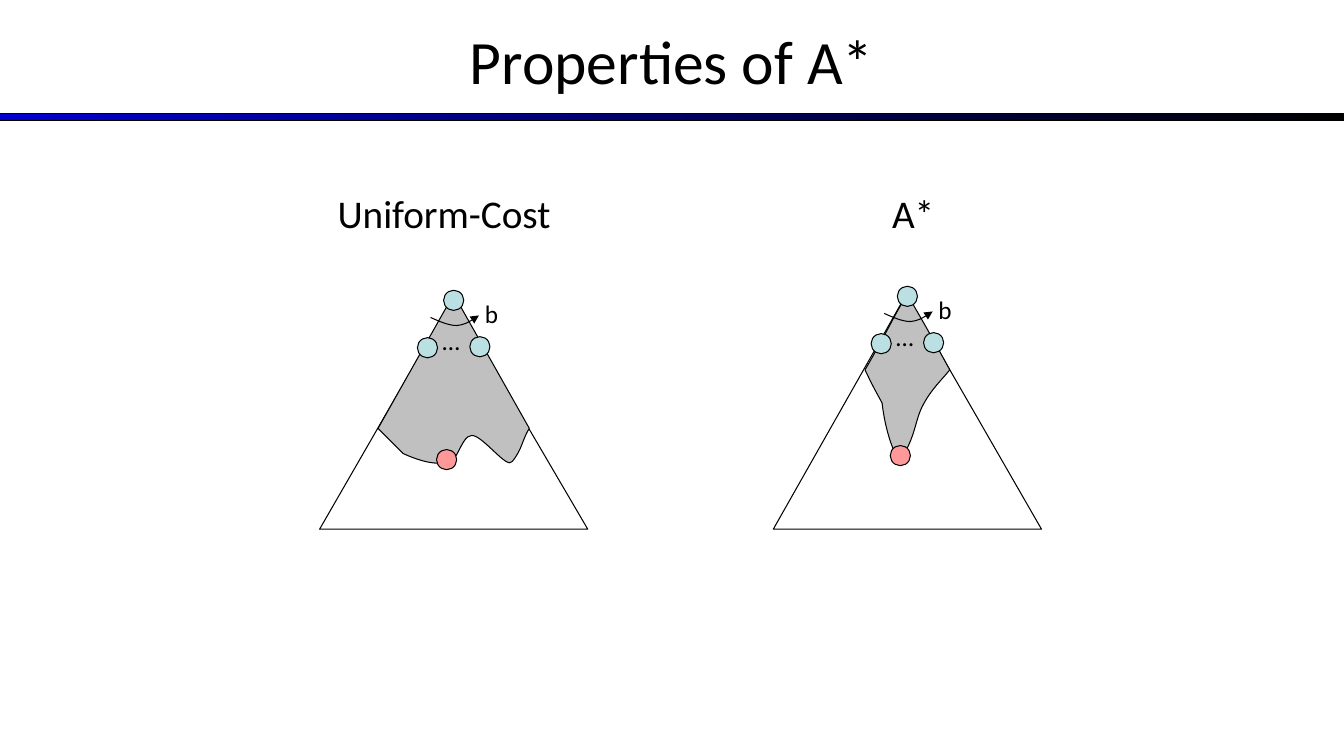
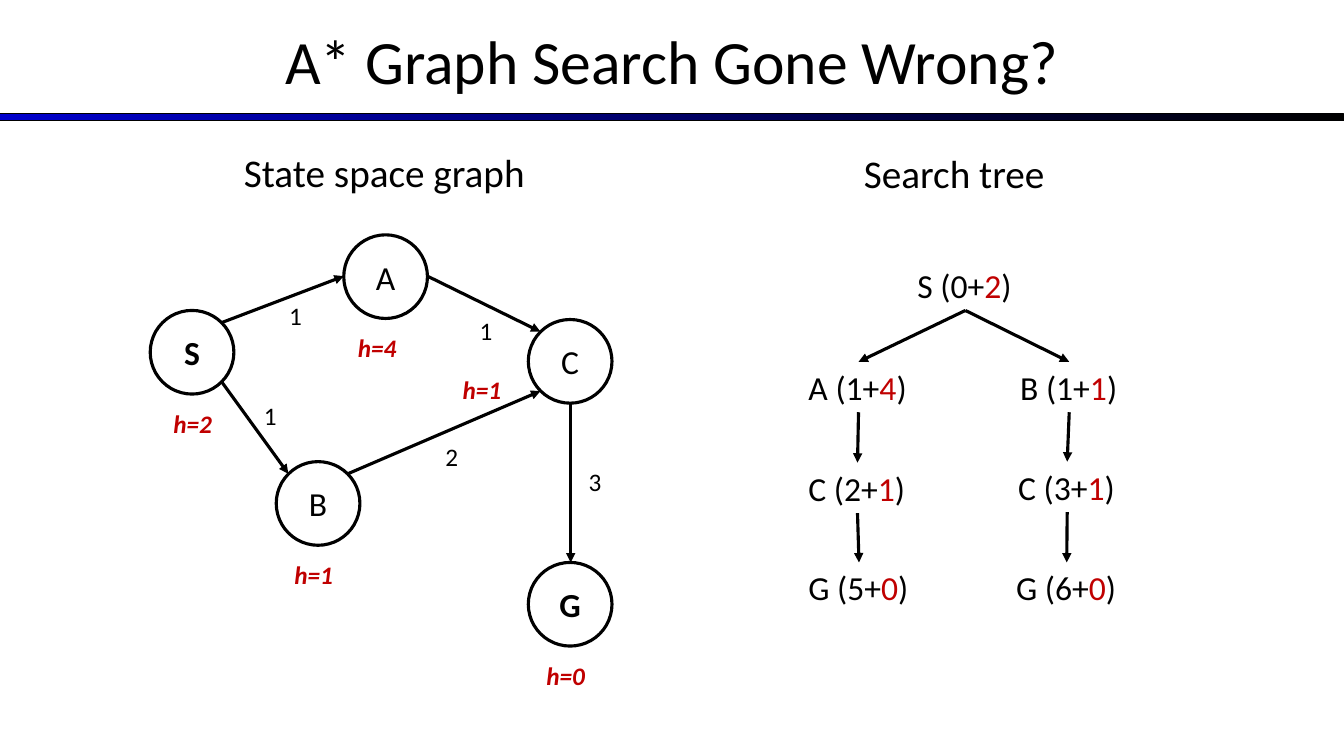
from dataclasses import dataclass
from math import cos, radians, sin

from lxml import etree
from pptx import Presentation
from pptx.dml.color import RGBColor
from pptx.enum.shapes import MSO_CONNECTOR, MSO_SHAPE
from pptx.enum.text import MSO_ANCHOR, MSO_AUTO_SIZE, PP_ALIGN
from pptx.oxml.ns import qn
from pptx.util import Pt

PX = 9144
WIDE, HIGH = 1333, 750
TITLE_ONLY = 5
RECT, OVAL = MSO_SHAPE.RECTANGLE, MSO_SHAPE.OVAL
STRAIGHT = MSO_CONNECTOR.STRAIGHT
MIDDLE = MSO_ANCHOR.MIDDLE
CENTER = PP_ALIGN.CENTER
GROW = MSO_AUTO_SIZE.SHAPE_TO_FIT_TEXT
TOP, BOTTOM = 0, 2


@dataclass(frozen=True)
class Theme:
    font: str = "Calibri"
    ink: str = "000000"
    paper: str = "FFFFFF"
    band: str = "0000CC"
    red: str = "C00000"
    node: str = "BBE0E3"
    goal: str = "FF9999"
    seen: str = "C0C0C0"
    title: int = 44
    head: int = 28
    body: int = 24
    small: int = 18
    thin: float = 0.75
    thick: float = 2.25


class Deck:
    """Draws styled elements on the current slide, with lengths in px."""

    def __init__(self, theme):
        self.theme = theme
        self.prs = Presentation()
        self.prs.slide_width = WIDE * PX
        self.prs.slide_height = HIGH * PX
        self.layout = self.prs.slide_layouts[TITLE_ONLY]
        self.slide = None

    def start(self, title):
        first = self.slide is None
        self.slide = self.prs.slides.add_slide(self.layout)
        if first:
            self.band()
        shape = self.slide.shapes.title
        self.place(shape, 0, -3, WIDE, 125)
        shape.text_frame.vertical_anchor = MIDDLE
        self.letter(shape, [(title, self.theme.ink)], self.theme.title, CENTER)

    def place(self, shape, x, y, w, h):
        shape.left, shape.top = x * PX, y * PX
        shape.width, shape.height = w * PX, h * PX

    def band(self):
        band = self.shape(RECT, 0, 113, WIDE, 7, self.theme.band, self.theme.thin)
        band.fill.gradient()
        band.fill.gradient_angle = 0
        tints = self.theme.band, self.theme.ink
        for stop, tint in zip(band.fill.gradient_stops, tints):
            stop.color.rgb = RGBColor.from_string(tint)
        self.layout.shapes.element.append(band.element)

    def letter(self, shape, runs, size, align=None, bold=False, slant=False):
        para = shape.text_frame.paragraphs[0]
        para.alignment = align
        for text, tint in runs:
            run = para.add_run()
            run.text = text
            font = run.font
            font.name, font.size = self.theme.font, Pt(size)
            font.bold, font.italic = bold, slant
            font.color.rgb = RGBColor.from_string(tint)

    def paint(self, shape, fill, width):
        shape.shadow.inherit = False
        if fill:
            shape.fill.solid()
            shape.fill.fore_color.rgb = RGBColor.from_string(fill)
        else:
            shape.fill.background()
        self.stroke(shape, width)

    def stroke(self, shape, width, arrow=False):
        shape.line.color.rgb = RGBColor.from_string(self.theme.ink)
        shape.line.width = Pt(width)
        if arrow:
            line = shape.element.find(".//" + qn("a:ln"))
            etree.SubElement(line, qn("a:tailEnd"), type="triangle")

    def shape(self, kind, x, y, w, h, fill, width):
        shape = self.slide.shapes.add_shape(kind, x * PX, y * PX, w * PX, h * PX)
        self.paint(shape, fill, width)
        return shape

    def dot(self, x, y, fill):
        self.shape(OVAL, x, y, 20, 20, fill, self.theme.thin)

    def state(self, name, x, y, bold):
        theme = self.theme
        shape = self.shape(OVAL, x, y, 83, 83, theme.paper, theme.thick)
        shape.text_frame.vertical_anchor = MIDDLE
        self.letter(shape, [(name, theme.ink)], theme.body, CENTER, bold)

    def text(self, runs, x, y, w, h, size, wrap=False, **style):
        box = self.slide.shapes.add_textbox(x * PX, y * PX, w * PX, h * PX)
        box.text_frame.word_wrap = wrap
        box.text_frame.auto_size = GROW
        self.letter(box, runs, size, **style)
        return box

    def label(self, text, x, y, w, h, size, wrap=False):
        self.text([(text, self.theme.ink)], x, y, w, h, size, wrap)

    def arrow(self, start, end):
        ends = [round(v) * PX for v in (*start, *end)]
        line = self.slide.shapes.add_connector(STRAIGHT, *ends)
        self.stroke(line, self.theme.thick, True)
        props = line.element.find(qn("p:spPr"))
        etree.SubElement(props, qn("a:effectLst"))
        return line

    def link(self, upper, lower):
        line = self.arrow((0, 0), (0, 0))
        line.begin_connect(upper, BOTTOM)
        line.end_connect(lower, TOP)

    def outline(self, start, steps, fill=None, close=True):
        points = [p for s in steps for p in zip(s[::2], s[1::2])]
        pen = self.slide.shapes.build_freeform(*start, scale=PX)
        pen.add_line_segments(points, close=close)
        form = pen.convert_to_shape()
        parts = iter(form.element.findall(".//" + qn("a:lnTo")))
        for step in steps:
            part = next(parts)
            if len(step) == 6:
                part.tag = qn("a:cubicBezTo")
                for _ in range(2):
                    rest = next(parts)
                    part.append(rest[0])
                    rest.getparent().remove(rest)
        self.paint(form, fill, self.theme.thin)
        return form

    def fan(self, dx, dy, start, region):
        theme = self.theme
        self.outline((317 + dx, 525), [(583 + dx, 525), (449 + dx, 296 + dy)])
        self.outline(start, region, theme.seen)
        for x, y in (414, 335), (466, 334), (440, 288):
            self.dot(x + dx, y + dy, theme.node)
        self.dot(433 + dx, 446 + dy, theme.goal)
        self.label("…", 429 + dx, 318 + dy, 30, 40, theme.small, True)
        bends = [(436, 319, 445, 323, 453, 323), (461, 322, 468, 318, 475, 313)]
        shift = (dx, dy) * 3
        bends = [tuple(a + b for a, b in zip(bend, shift)) for bend in bends]
        arc = self.outline((427 + dx, 315 + dy), bends, close=False)
        self.stroke(arc, theme.thin, True)
        self.label("b", 471 + dx, 291 + dy, 33, 40, theme.small, True)


def rim(spot, angle):
    x, y = spot
    turn = radians(angle)
    return x + 41.5 + 41.5 * cos(turn), y + 41.5 - 41.5 * sin(turn)


def compare(deck):
    deck.start("Properties of A*")
    deck.fan(0, 0, (450, 292), [
        (375, 425), (400, 450),
        (400, 450, 429, 464, 442, 458),
        (453, 464, 457, 432, 468, 432),
        (479, 432, 503, 466, 508, 458),
        (518, 446, 518, 436, 525, 425),
    ])
    deck.fan(450, -4, (900, 292), [
        (885, 316, 884, 322, 858, 367),
        (866, 384, 868, 387, 875, 400),
        (875, 400, 878, 434, 892, 458),
        (909, 433, 907, 417, 916, 401),
        (924, 386, 934, 377, 942, 367),
        (917, 321, 910, 310, 900, 292),
    ])
    for text, x, w in ("Uniform-Cost", 325, 250), ("A*", 875, 67):
        deck.label(text, x, 183, w, 57, deck.theme.head, True)


def search(deck):
    theme = deck.theme
    deck.start("A* Graph Search Gone Wrong?")
    spots = {"S": (149, 308), "A": (341, 233), "B": (274, 458),
             "C": (524, 317), "G": (524, 558)}
    for name, spot in spots.items():
        deck.state(name, *spot, name in "SG")

    edges = [("S", 45, "A", 180, "1", 277, 293),
             ("S", -45, "B", 135, "1", 252, 392),
             ("B", 45, "C", 225, "2", 432, 433),
             ("A", 0, "C", 135, "1", 466, 308),
             ("C", -90, "G", 90, "3", 574, 458)]
    for tail, out, head, into, cost, x, y in edges:
        deck.arrow(rim(spots[tail], out), rim(spots[head], into))
        deck.label(cost, x, y, 34, 40, theme.small)

    hints = [("h=2", 162, 400), ("h=1", 282, 550), ("h=4", 345, 325),
             ("h=1", 449, 366), ("h=0", 532, 650)]
    for hint, x, y in hints:
        deck.text([(hint, theme.red)], x, y, 65, 40, theme.small,
                  bold=True, slant=True)

    tree = [("S (0+", "2", 900, 258, 115, None),
            ("A (1+", "4", 792, 359, 119, 0),
            ("B (1+", "1", 1002, 359, 117, 0),
            ("C (2+", "1", 792, 459, 117, 1),
            ("C (3+", "1", 1000, 458, 117, 2),
            ("G (5+", "0", 792, 558, 120, 3),
            ("G (6+", "0", 998, 558, 120, 4)]
    boxes = []
    for cost, hint, x, y, w, above in tree:
        runs = [(cost, theme.ink), (hint, theme.red), (")", theme.ink)]
        boxes.append(deck.text(runs, x, y, w, 50, theme.body))
        if above is not None:
            deck.link(boxes[above], boxes[-1])

    deck.label("State space graph", 232, 142, 302, 57, theme.head)
    deck.label("Search tree", 847, 143, 201, 57, theme.head)


def main():
    deck = Deck(Theme())
    compare(deck)
    search(deck)
    deck.prs.save("out.pptx")


if __name__ == "__main__":
    main()
